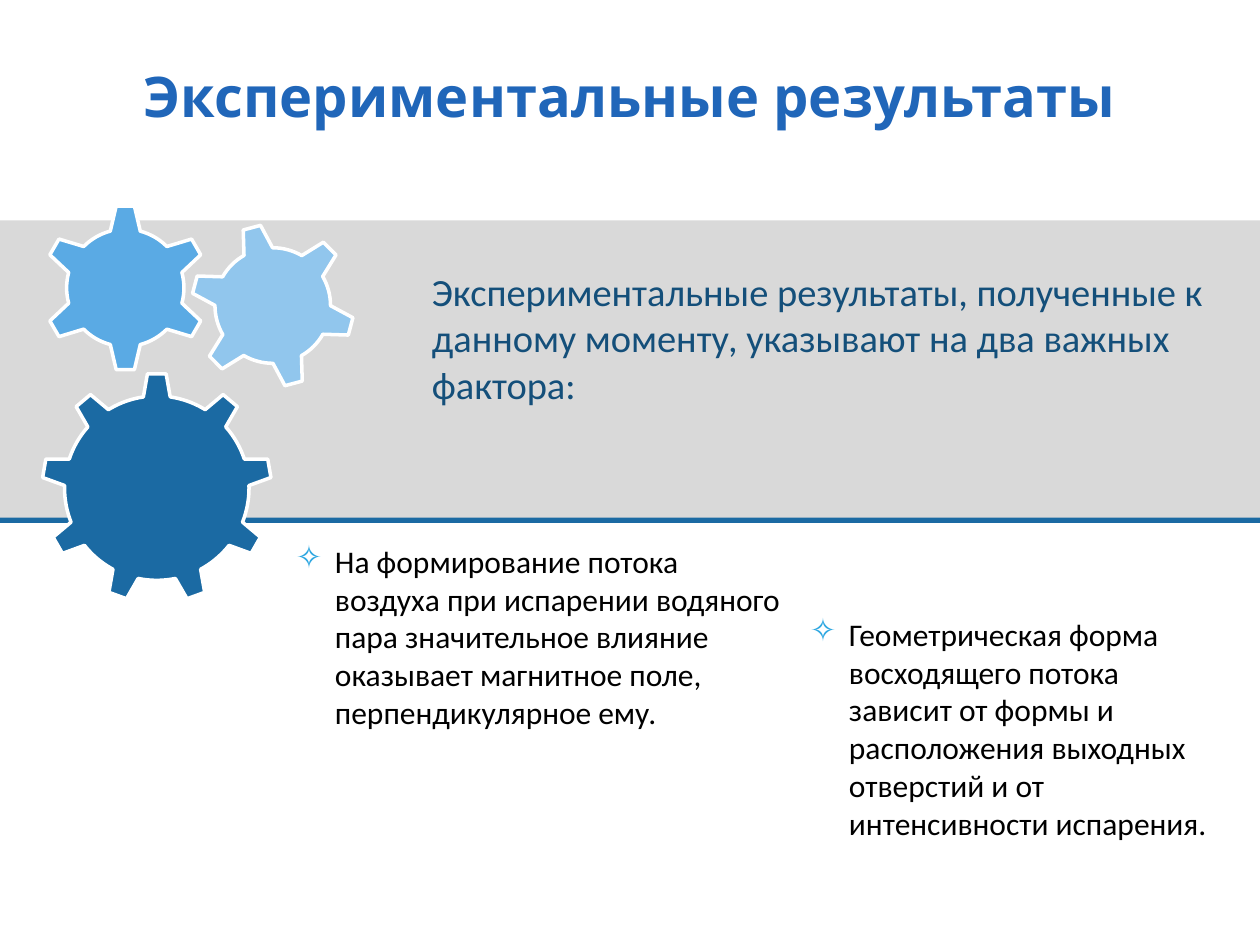
from lxml.etree import SubElement
from pptx import Presentation
from pptx.dml.color import RGBColor
from pptx.enum.shapes import MSO_SHAPE as Shape
from pptx.enum.text import MSO_ANCHOR, MSO_AUTO_SIZE, PP_ALIGN
from pptx.oxml.ns import qn
from pptx.util import Inches, Pt

BLUE = RGBColor(0x1B, 0x6A, 0xA3)
MID_BLUE = RGBColor(0x5A, 0xAA, 0xE4)
PALE_BLUE = RGBColor(0x91, 0xC6, 0xED)
TITLE_BLUE = RGBColor(0x20, 0x66, 0xB9)
LEAD_BLUE = RGBColor(0x14, 0x4F, 0x7A)
BULLET_BLUE = RGBColor(0x2D, 0xA7, 0xE1)
GREY = RGBColor(0xD9, 0xD9, 0xD9)
BLACK = RGBColor(0, 0, 0)
WHITE = RGBColor(0xFF, 0xFF, 0xFF)


def box(*lengths):
    """Convert left, top, width and height to slide units."""
    return [Inches(n) for n in lengths]


def style_font(p, name, size, color, bold=False):
    """Format every run of a paragraph."""
    for r in p.runs:
        r.font.name, r.font.size, r.font.bold = name, Pt(size), bold
        r.font.color.rgb = color


def set_title(s, text):
    """Fill, place and format the title placeholder."""
    title = s.shapes.title
    title.left, title.top, title.width, title.height = box(0.5, 0.42, 9, 0.67)
    tf = title.text_frame
    tf.text = text
    tf.vertical_anchor = MSO_ANCHOR.MIDDLE
    tf.paragraphs[0].alignment = PP_ALIGN.CENTER
    style_font(tf.paragraphs[0], "Karla", 32, TITLE_BLUE, bold=True)


def add_filled(shapes, kind, place, fill):
    """Add a flat preset shape without an outline."""
    sp = shapes.add_shape(kind, *box(*place))
    sp.shadow.inherit = False
    sp.fill.solid()
    sp.fill.fore_color.rgb = fill
    sp.line.fill.background()
    return sp


def add_gear(shapes, kind, left, top, size, fill, rotation=0):
    """Add a white-edged gear."""
    gear = add_filled(shapes, kind, (left, top, size, size), fill)
    gear.line.color.rgb = WHITE
    gear.line.width = Pt(2)
    gear.rotation = rotation


def add_bullet(p):
    """Give a paragraph a coloured star bullet with a hanging indent."""
    pPr = p._p.get_or_add_pPr()
    indent = Inches(0.31)
    pPr.set("marL", str(indent))
    pPr.set("indent", str(-indent))
    color = SubElement(pPr, qn("a:buClr"))
    SubElement(color, qn("a:srgbClr")).set("val", str(BULLET_BLUE))
    SubElement(pPr, qn("a:buChar")).set("char", "✧")


def add_text(s, place, text, size, color, bullet=False):
    """Add a wrapped text box that grows with its text."""
    tf = s.shapes.add_textbox(*box(*place)).text_frame
    tf.word_wrap = True
    tf.auto_size = MSO_AUTO_SIZE.SHAPE_TO_FIT_TEXT
    tf.text = text
    p = tf.paragraphs[0]
    if bullet:
        add_bullet(p)
    style_font(p, "Calibri", size, color)


def main():
    """Build the experimental results slide."""
    prs = Presentation()
    prs.slide_width, prs.slide_height = Inches(10), Inches(7.5)
    s = prs.slides.add_slide(prs.slide_layouts[5])

    add_filled(s.shapes, Shape.RECTANGLE, (-0.02, 4.08, 10.02, 0.07), BLUE)
    add_filled(s.shapes, Shape.RECTANGLE, (-0.01, 1.75, 10.01, 2.36), GREY)
    set_title(s, "Экспериментальные результаты")
    add_text(s, (3.33, 2.08, 6.67, 1.21),
             "Экспериментальные результаты, полученные к данному моменту, "
             "указывают на два важных фактора:", 22, LEAD_BLUE)
    add_text(s, (2.25, 4.25, 4.08, 1.62),
             "На формирование потока воздуха при испарении водяного пара "
             "значительное влияние оказывает магнитное поле, "
             "перпендикулярное ему.", 18, BLACK, bullet=True)
    add_text(s, (6.33, 4.83, 3.5, 1.92),
             "Геометрическая форма восходящего потока зависит от формы и "
             "расположения выходных отверстий и от интенсивности испарения.",
             18, BLACK, bullet=True)

    gears = s.shapes.add_group_shape().shapes
    add_gear(gears, Shape.GEAR_9, 0.33, 2.96, 1.83, BLUE)
    add_gear(gears, Shape.GEAR_6, 0.33, 1.62, 1.33, MID_BLUE)
    add_gear(gears, Shape.GEAR_6, 1.51, 1.77, 1.31, PALE_BLUE, rotation=345)

    prs.save("out.pptx")


if __name__ == "__main__":
    main()
